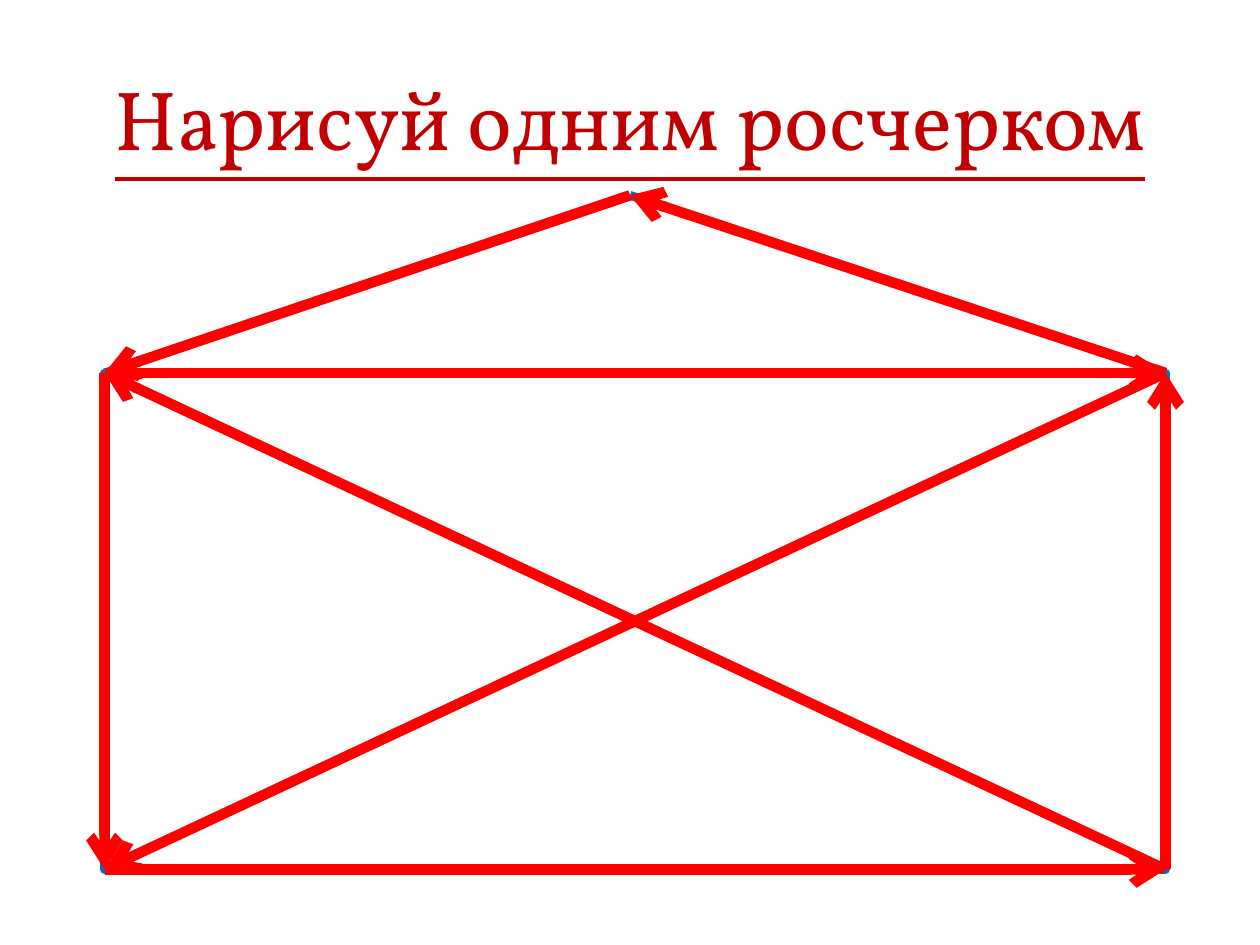
import itertools

import lxml.etree
import pptx
import pptx.dml.color
import pptx.enum.shapes
import pptx.enum.text
import pptx.oxml.ns
import pptx.util
from pptx.util import Inches

TITLE = "Нарисуй одним росчерком"

LEFT, RIGHT, TOP, BOTTOM = 0.83, 9.25, 2.96, 6.9
CORNERS = {
    "top left": (LEFT, TOP),
    "top right": (RIGHT, TOP),
    "bottom left": (LEFT, BOTTOM),
    "bottom right": (RIGHT, BOTTOM),
    "flap": (5, 1.55),
}
ENVELOPE_LINES = [
    ("top left", "flap"),
    ("flap", "top right"),
    ("top left", "bottom right"),
    ("bottom left", "top right"),
]
# Every corner in the order the pen visits it
STROKE = [
    "bottom right", "top left", "bottom left", "bottom right", "top right",
    "flap", "top left", "top right", "bottom left",
]

THEME = {
    "font": "Vollkorn",
    "title size": 48,
    "title": "C00000",
    "envelope": "0070C0",
    "envelope width": 5,
    "stroke": "FF0000",
    "stroke width": 6,
}


def color(name):
    return pptx.dml.color.RGBColor.from_string(THEME[name])


def style_line(line, name):
    line.color.rgb = color(name)
    line.width = pptx.util.Pt(THEME[name + " width"])


def add_text(slide, text, left, top, width, height, *, size, fill, underline=False):
    box = slide.shapes.add_textbox(*map(Inches, (left, top, width, height)))
    frame = box.text_frame
    frame.word_wrap = True
    frame.vertical_anchor = pptx.enum.text.MSO_ANCHOR.MIDDLE
    para = frame.paragraphs[0]
    para.alignment = pptx.enum.text.PP_ALIGN.CENTER
    span = para.add_run()
    span.text = text
    span.font.name = THEME["font"]
    span.font.size = pptx.util.Pt(THEME[size])
    span.font.color.rgb = color(fill)
    span.font.underline = underline


def add_line(slide, start, end, name, arrow=False):
    ends = map(Inches, CORNERS[start] + CORNERS[end])
    line = slide.shapes.add_connector(pptx.enum.shapes.MSO_CONNECTOR.STRAIGHT, *ends)
    style_line(line.line, name)
    properties = line._element.spPr
    qn = pptx.oxml.ns.qn
    if arrow:
        lxml.etree.SubElement(properties.find(qn("a:ln")), qn("a:tailEnd"), type="arrow")
    lxml.etree.SubElement(properties, qn("a:effectLst"))


def add_envelope(slide):
    body = slide.shapes.add_shape(
        pptx.enum.shapes.MSO_SHAPE.RECTANGLE,
        *map(Inches, (LEFT, TOP, RIGHT - LEFT, BOTTOM - TOP)),
    )
    body.shadow.inherit = False
    body.fill.background()
    style_line(body.line, "envelope")
    for start, end in ENVELOPE_LINES:
        add_line(slide, start, end, "envelope")


def main():
    deck = pptx.Presentation()
    deck.slide_width, deck.slide_height = Inches(10), Inches(7.5)
    page = deck.slides.add_slide(deck.slide_layouts[6])
    add_text(page, TITLE, 0.5, 0.3, 9, 1.25,
             size="title size", fill="title", underline=True)
    add_envelope(page)
    for start, end in itertools.pairwise(STROKE):
        add_line(page, start, end, "stroke", arrow=True)
    deck.save("out.pptx")


if __name__ == "__main__":
    main()
